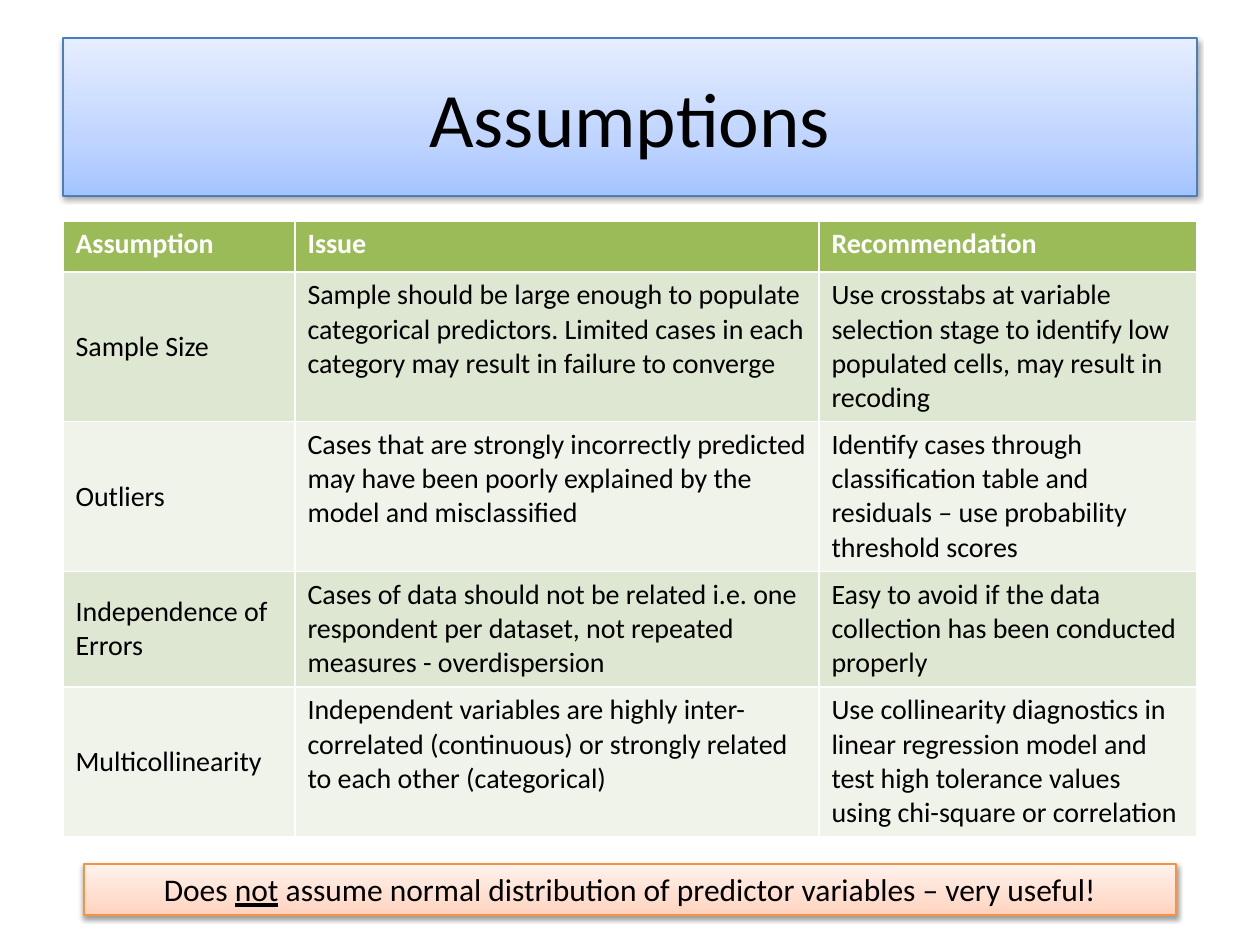
"""Build the slide on regression assumptions: title, table and closing remark."""
from pptx import Presentation
from pptx.dml.color import RGBColor
from pptx.enum.shapes import MSO_SHAPE
from pptx.enum.text import MSO_ANCHOR, MSO_AUTO_SIZE, PP_ALIGN
from pptx.oxml import parse_xml
from pptx.oxml.ns import nsdecls, qn
from pptx.util import Pt

RECT = MSO_SHAPE.RECTANGLE
TOP, MIDDLE = MSO_ANCHOR.TOP, MSO_ANCHOR.MIDDLE
CENTER = PP_ALIGN.CENTER
GROW = MSO_AUTO_SIZE.SHAPE_TO_FIT_TEXT
PX = 914400 / 126
FONT = "Calibri"


def color(value):
    return RGBColor.from_string(value)


def style_panel(panel, box, shades, outline):
    panel.left, panel.top, panel.width, panel.height = [round(n * PX) for n in box]
    panel.line.color.rgb = color(outline)
    panel.line.width = Pt(0.75)
    stops = "".join(
        f'<a:gs pos="{position}"><a:srgbClr val="{shade}"/></a:gs>'
        for position, shade in zip((0, 35000, 100000), shades))
    line = panel._element.spPr.find(qn("a:ln"))
    line.addprevious(parse_xml(
        f'<a:gradFill {nsdecls("a")} rotWithShape="1"><a:gsLst>{stops}</a:gsLst>'
        '<a:lin ang="16200000" scaled="0"/></a:gradFill>'))
    line.addnext(parse_xml(
        f'<a:effectLst {nsdecls("a")}><a:outerShdw blurRad="40000" dist="20000" '
        'dir="5400000" rotWithShape="0"><a:srgbClr val="000000">'
        '<a:alpha val="38000"/></a:srgbClr></a:outerShdw></a:effectLst>'))


prs = Presentation()
prs.slide_width, prs.slide_height = round(1260 * PX), round(945 * PX)
slide = prs.slides.add_slide(prs.slide_layouts[5])

title = slide.shapes.title
style_panel(title, (63, 38, 1134, 158), ("A4C4FF", "BFD4FF", "E6EEFF"), "4B7EBC")
title.text_frame.text = "Assumptions"
title.text_frame.vertical_anchor = MIDDLE
heading = title.text_frame.paragraphs[0]
heading.alignment = CENTER
heading.font.name, heading.font.size = FONT, Pt(44)
heading.font.color.rgb = color("000000")

assumptions = [
    ("Assumption", "Issue", "Recommendation"),
    ("Sample Size",
     "Sample should be large enough to populate categorical predictors. "
     "Limited cases in each category may result in failure to converge",
     "Use crosstabs at variable selection stage to identify low populated cells, "
     "may result in recoding"),
    ("Outliers",
     "Cases that are strongly incorrectly predicted may have been poorly explained "
     "by the model and misclassified",
     "Identify cases through classification table and residuals – use probability "
     "threshold scores"),
    ("Independence of Errors",
     "Cases of data should not be related i.e. one respondent per dataset, "
     "not repeated measures - overdispersion",
     "Easy to avoid if the data collection has been conducted properly"),
    ("Multicollinearity",
     "Independent variables are highly inter-correlated (continuous) or strongly "
     "related to each other (categorical)",
     "Use collinearity diagnostics in linear regression model and test high "
     "tolerance values using chi-square or correlation"),
]
column_widths = (232, 524, 378)
row_heights = (51, 149, 150, 115, 150)
table = slide.shapes.add_table(
    len(row_heights), len(column_widths), round(63 * PX), round(221 * PX),
    round(sum(column_widths) * PX), round(sum(row_heights) * PX)).table
for column, width in zip(table.columns, column_widths):
    column.width = round(width * PX)
for r, (entries, height) in enumerate(zip(assumptions, row_heights)):
    table.rows[r].height = round(height * PX)
    header = r == 0
    band = "9BBB59" if header else ("EFF3EA", "DEE7D1")[r % 2]
    for c, entry in enumerate(entries):
        cell = table.cell(r, c)
        cell.text = entry
        cell.fill.solid()
        cell.fill.fore_color.rgb = color(band)
        cell.vertical_anchor = MIDDLE if c == 0 and not header else TOP
        font = cell.text_frame.paragraphs[0].font
        font.name, font.size, font.bold = FONT, Pt(16), header
        font.color.rgb = color("FFFFFF" if header else "000000")

remark = slide.shapes.add_shape(RECT, 0, 0, 0, 0)
style_panel(remark, (84, 864, 1092, 51), ("FFD2BD", "FFDED0", "FFF2ED"), "F69240")
remark.text_frame.word_wrap = True
remark.text_frame.auto_size = GROW
remark.text_frame.vertical_anchor = TOP
sentence = remark.text_frame.paragraphs[0]
sentence.alignment = CENTER
sentence.font.name, sentence.font.size = FONT, Pt(18)
sentence.font.color.rgb = color("000000")
for part in ("Does ", "not", " assume normal distribution of predictor variables – very useful!"):
    run = sentence.add_run()
    run.text = part
    if part == "not":
        run.font.underline = True

prs.save("out.pptx")
